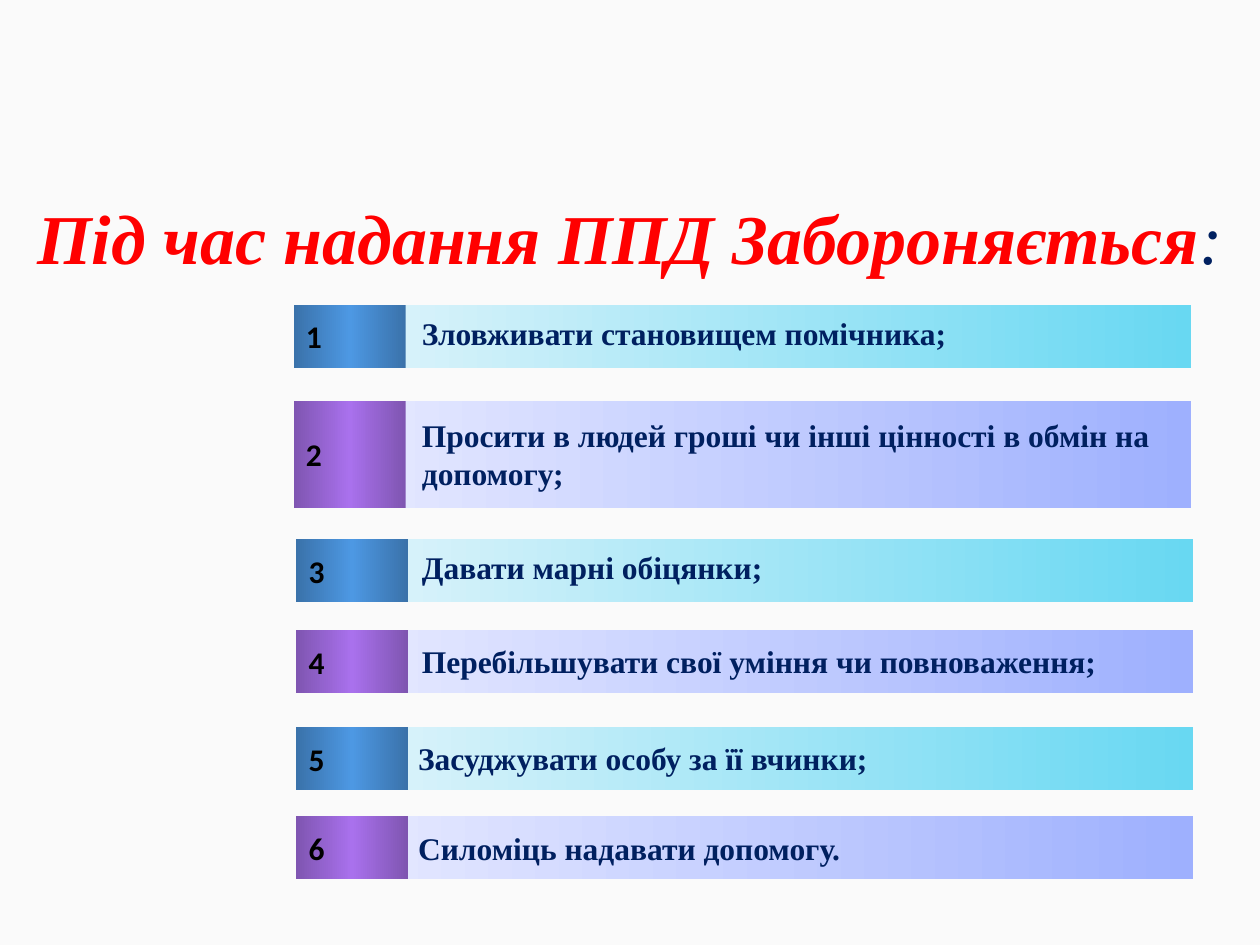
import copy

import pptx
import pptx.dml.color
import pptx.enum.shapes
import pptx.enum.text
import pptx.util

RGB = pptx.dml.color.RGBColor
ANCHOR = pptx.enum.text.MSO_ANCHOR
In = pptx.util.Inches
Pt = pptx.util.Pt

PAPER = RGB(0xFA, 0xFA, 0xFA)
RED = RGB(0xFF, 0x00, 0x00)
NAVY = RGB(0x00, 0x20, 0x60)
BLACK = RGB(0x00, 0x00, 0x00)
BLUE_EDGE = RGB(0x3A, 0x72, 0xAA)
BLUE_MID = RGB(0x4D, 0x98, 0xE3)
VIOLET_EDGE = RGB(0x7F, 0x55, 0xB1)
VIOLET_MID = RGB(0xA9, 0x71, 0xED)
CYAN_LIGHT = RGB(0xD8, 0xF2, 0xFA)
CYAN = RGB(0x68, 0xD8, 0xF2)
LILAC_LIGHT = RGB(0xE2, 0xE6, 0xFF)
LILAC = RGB(0x9E, 0xB0, 0xFE)

# Odd rows use the first pair of gradients (badge, bar), even rows the second
THEMES = [
    ([BLUE_EDGE, BLUE_MID, BLUE_EDGE], [CYAN_LIGHT, CYAN]),
    ([VIOLET_EDGE, VIOLET_MID, VIOLET_EDGE], [LILAC_LIGHT, LILAC]),
]

# Columns, in inches
BADGE_W, BAR_W, BAR_SHIFT = 0.89, 6.34, 0.78
ROW_H = 0.5

# Row left, top, height; text left, top, width, height; wording
ROWS = [
    (2.33, 2.42, ROW_H, 3.25, 2.44, 6.09, 0.4, "Зловживати становищем помічника;"),
    (2.33, 3.18, 0.85, 3.25, 3.25, 6.37, 0.71,
     "Просити в людей гроші чи інші цінності в обмін на допомогу;"),
    (2.35, 4.28, ROW_H, 3.25, 4.3, 6.09, 0.4, "Давати марні обіцянки;"),
    (2.35, 5, ROW_H, 3.25, 5.05, 6.37, 0.4,
     "Перебільшувати свої уміння чи повноваження;"),
    (2.35, 5.77, ROW_H, 3.22, 5.82, 6.21, 0.4, "Засуджувати особу за її вчинки;"),
    (2.35, 6.48, ROW_H, 3.22, 6.53, 6.37, 0.4, "Силоміць надавати допомогу."),
]


def set_gradient(fill, sp, colors):
    """Fill from left to right with evenly spaced colours."""
    fill.gradient()
    fill.gradient_angle = 0
    first = sp._element.xpath(".//a:gsLst/a:gs")[0]
    for _ in colors[2:]:
        first.addnext(copy.deepcopy(first))
    for i, (stop, color) in enumerate(zip(fill.gradient_stops, colors)):
        stop.position = i / (len(colors) - 1)
        stop.color.rgb = color


def add_block(group, left, top, width, height, colors):
    sp = group.shapes.add_shape(pptx.enum.shapes.MSO_SHAPE.RECTANGLE,
                                In(left), In(top), In(width), In(height))
    sp.shadow.inherit = False
    sp.line.fill.background()
    set_gradient(sp.fill, sp, colors)
    return sp


def set_text(sp, text, font, color, anchor):
    tf = sp.text_frame
    tf.word_wrap = True
    tf.vertical_anchor = anchor
    p = tf.paragraphs[0]
    p.alignment = pptx.enum.text.PP_ALIGN.LEFT
    p.add_run().text = text
    p.font.name, p.font.size, p.font.bold = font, Pt(18), True
    p.font.color.rgb = color


def add_row(s, number, row):
    left, top, height, text_left, text_top, text_w, text_h, text = row
    badge_colors, bar_colors = THEMES[(number - 1) % 2]
    group = s.shapes.add_group_shape()
    add_block(group, left + BAR_SHIFT, top, BAR_W, height, bar_colors)
    badge = add_block(group, left, top, BADGE_W, height, badge_colors)
    set_text(badge, str(number), "Calibri", BLACK, ANCHOR.MIDDLE)
    tb = s.shapes.add_textbox(In(text_left), In(text_top), In(text_w), In(text_h))
    set_text(tb, text, "Times New Roman", NAVY, ANCHOR.TOP)
    tb.text_frame.auto_size = pptx.enum.text.MSO_AUTO_SIZE.SHAPE_TO_FIT_TEXT


def add_title(s, width):
    tf = s.shapes.add_textbox(0, In(1.43), width, In(0.98)).text_frame
    tf.word_wrap = True
    tf.vertical_anchor = ANCHOR.MIDDLE
    p = tf.paragraphs[0]
    p.alignment = pptx.enum.text.PP_ALIGN.CENTER
    p.line_spacing = 0.9
    p.font.name, p.font.size, p.font.italic = "Times New Roman", Pt(40), True
    for text, color, bold in [("Під час надання ППД Забороняється", RED, True),
                              (":", NAVY, False)]:
        r = p.add_run()
        r.text = text
        r.font.bold = bold
        r.font.color.rgb = color


def main():
    prs = pptx.Presentation()
    prs.slide_width, prs.slide_height = In(10), In(7.5)
    s = prs.slides.add_slide(prs.slide_layouts[6])
    s.background.fill.solid()
    s.background.fill.fore_color.rgb = PAPER

    # Heading, then the numbered prohibitions
    add_title(s, prs.slide_width)
    for number, row in enumerate(ROWS, 1):
        add_row(s, number, row)
    prs.save("out.pptx")


if __name__ == "__main__":
    main()
